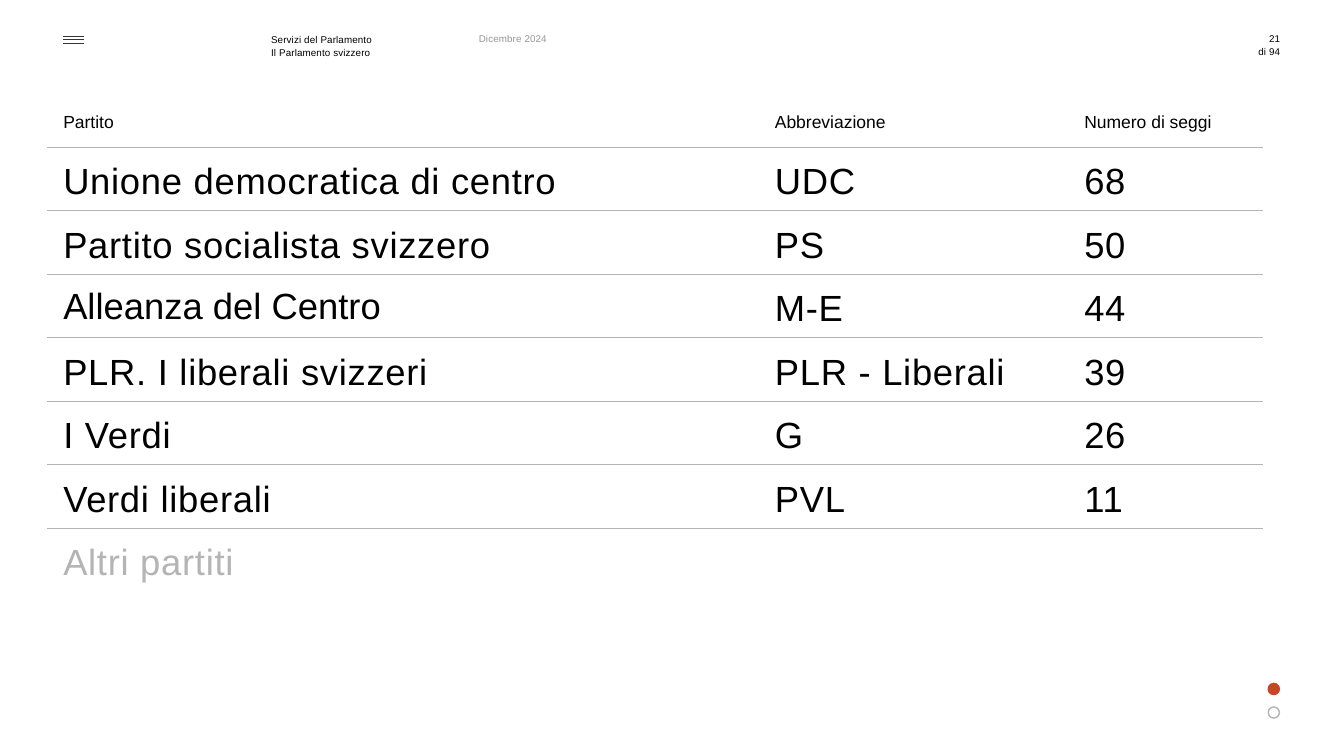
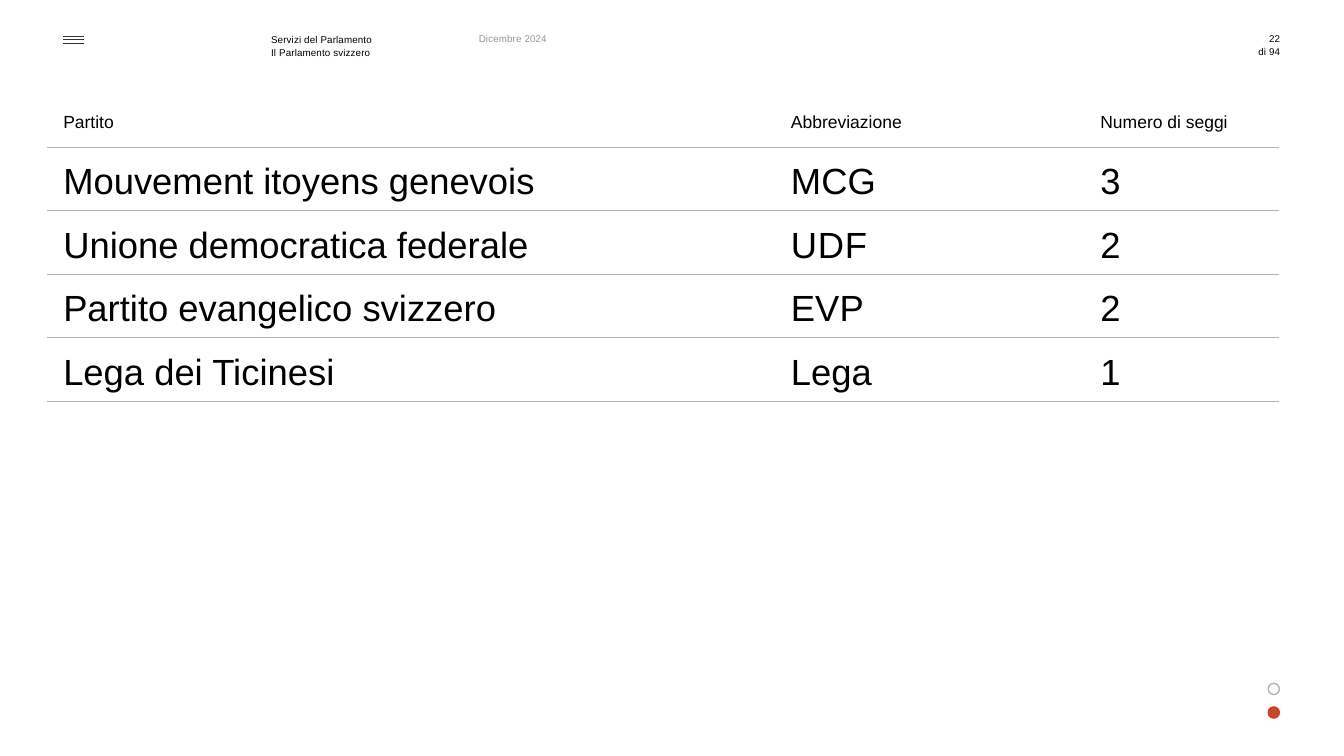
import dataclasses

import lxml.etree
import pptx
import pptx.dml.color
import pptx.enum.shapes
import pptx.enum.text
import pptx.oxml.ns
import pptx.util

Pt = pptx.util.Pt
ALIGN = pptx.enum.text.PP_ALIGN
SHAPE = pptx.enum.shapes.MSO_SHAPE
CONNECTOR = pptx.enum.shapes.MSO_CONNECTOR
qn = pptx.oxml.ns.qn
NO_GRID_STYLE = "{2D5ABB26-0587-4C30-8999-92F81FD0307C}"


@dataclasses.dataclass(frozen=True)
class TextStyle:
    size: float
    color: str
    spacing: float = 0
    line_spacing: float = 1.0


class Theme:
    font = "Arial"
    black = "000000"
    menu = "343434"
    muted = "969696"
    rule = "B4B4B4"
    accent = "C84628"
    band = TextStyle(7, black, 0.1)
    band_lines = dataclasses.replace(band, line_spacing=1.1)
    band_date = dataclasses.replace(band, color=muted)
    heading = TextStyle(12.5, black)
    body = TextStyle(26, black, 0, 1.07)
    body_wide = dataclasses.replace(body, spacing=0.5)
    body_plain = dataclasses.replace(body, line_spacing=1.0)
    body_faded = dataclasses.replace(body_wide, color=rule)


def rgb(color):
    return pptx.dml.color.RGBColor.from_string(color)


class Deck:
    margin_right = 914.4
    heading_height = 28.08
    row_height = 45.36
    heading_insets = (11.34, 3.6, 7.2, 3.6)
    body_insets = (11.34, 8.64, 5.76, 0)

    def __init__(self, theme):
        self.theme = theme
        self.presentation = pptx.Presentation()
        self.presentation.slide_width = Pt(960)
        self.presentation.slide_height = Pt(540)
        self.slide = None

    def new_slide(self, number, active_dot):
        layout = self.presentation.slide_layouts[6]
        self.slide = self.presentation.slides.add_slide(layout)
        self.menu_icon()
        self.text(193.68, 23.04, 93.6, 18,
                  ["Servizi del Parlamento", "Il Parlamento svizzero"],
                  self.theme.band_lines)
        self.text(342, 23.04, 87.12, 8.64, ["Dicembre 2024"], self.theme.band_date)
        for top, label in ((23.04, str(number)), (32.4, "di 94")):
            self.text(self.margin_right - 31.68, top, 31.68, 8.64, [label],
                      self.theme.band, ALIGN.RIGHT)
        for index in range(2):
            self.dot(488.16 + 16.8 * index, index == active_dot)

    def styled_run(self, paragraph, content, style, align=ALIGN.LEFT):
        paragraph.alignment = align
        paragraph.line_spacing = style.line_spacing
        run = paragraph.add_run()
        run.text = content
        run.font.name = self.theme.font
        run.font.size = Pt(style.size)
        run.font.color.rgb = rgb(style.color)
        run._r.get_or_add_rPr().set("spc", str(round(style.spacing * 100)))

    def text(self, left, top, width, height, lines, style, align=ALIGN.LEFT):
        box = self.slide.shapes.add_textbox(Pt(left), Pt(top), Pt(width), Pt(height))
        frame = box.text_frame
        frame.word_wrap = True
        frame.margin_left = frame.margin_right = 0
        frame.margin_top = frame.margin_bottom = 0
        for index, line in enumerate(lines):
            paragraph = frame.add_paragraph() if index else frame.paragraphs[0]
            self.styled_run(paragraph, line, style, align)

    def menu_icon(self):
        for index in range(3):
            height = Pt(25.92 + 2.5 * index)
            line = self.slide.shapes.add_connector(
                CONNECTOR.STRAIGHT, Pt(45.36), height, Pt(59.76), height)
            line.line.color.rgb = rgb(self.theme.menu)
            line.line.width = Pt(0.4)
            lxml.etree.SubElement(line._element.spPr, qn("a:effectLst"))

    def dot(self, top, active):
        diameter = 8
        shape = self.slide.shapes.add_shape(
            SHAPE.OVAL, Pt(self.margin_right - diameter - 0.5), Pt(top),
            Pt(diameter), Pt(diameter))
        shape.shadow.inherit = False
        if active:
            shape.fill.solid()
            shape.fill.fore_color.rgb = rgb(self.theme.accent)
        else:
            shape.fill.background()
        shape.line.color.rgb = rgb(self.theme.accent if active else self.theme.rule)
        shape.line.width = Pt(1)

    def cell(self, cell, content, style, insets, ruled):
        (cell.margin_left, cell.margin_top,
         cell.margin_right, cell.margin_bottom) = map(Pt, insets)
        cell.fill.background()
        if content:
            self.styled_run(cell.text_frame.paragraphs[0], content, style)
        if ruled:
            border = lxml.etree.Element(qn("a:lnB"), w=str(int(Pt(0.5))))
            fill = lxml.etree.SubElement(border, qn("a:solidFill"))
            lxml.etree.SubElement(fill, qn("a:srgbClr"), val=self.theme.rule)
            cell._tc.get_or_add_tcPr().insert(0, border)

    def party_table(self, party_width, parties, style, exceptions, closed):
        rows = [("Partito", "Abbreviazione", "Numero di seggi"), *parties]
        widths = (party_width, 221.04, 138.96)
        height = self.heading_height + self.row_height * len(parties)
        frame = self.slide.shapes.add_table(
            len(rows), len(widths), Pt(33.84), Pt(77.04), Pt(sum(widths)), Pt(height))
        table = frame.table
        table.first_row = table.horz_banding = False
        table._tbl.tblPr.find(qn("a:tableStyleId")).text = NO_GRID_STYLE
        for column, width in zip(table.columns, widths):
            column.width = Pt(width)
        for row_index, row in enumerate(rows):
            heading = row_index == 0
            table.rows[row_index].height = Pt(
                self.heading_height if heading else self.row_height)
            ruled = closed or row_index < len(rows) - 1
            for column_index, content in enumerate(row):
                cell_style = (self.theme.heading if heading
                              else exceptions.get(content, style))
                insets = self.heading_insets if heading else self.body_insets
                self.cell(table.cell(row_index, column_index), content,
                          cell_style, insets, ruled)


def main():
    theme = Theme()
    deck = Deck(theme)

    deck.new_slide(21, active_dot=0)
    deck.party_table(
        508.32,
        [
            ("Unione democratica di centro", "UDC", "68"),
            ("Partito socialista svizzero", "PS", "50"),
            ("Alleanza del Centro", "M-E", "44"),
            ("PLR. I liberali svizzeri", "PLR - Liberali", "39"),
            ("I Verdi", "G", "26"),
            ("Verdi liberali", "PVL", "11"),
            ("Altri partiti", "", ""),
        ],
        theme.body_wide,
        {"Alleanza del Centro": theme.body_plain, "Altri partiti": theme.body_faded},
        closed=False,
    )

    deck.new_slide(22, active_dot=1)
    deck.party_table(
        519.84,
        [
            ("Mouvement itoyens genevois", "MCG", "3"),
            ("Unione democratica federale", "UDF", "2"),
            ("Partito evangelico svizzero", "EVP", "2"),
            ("Lega dei Ticinesi", "Lega", "1"),
        ],
        theme.body,
        {"UDF": theme.body_wide},
        closed=True,
    )

    deck.presentation.save("out.pptx")


if __name__ == "__main__":
    main()
